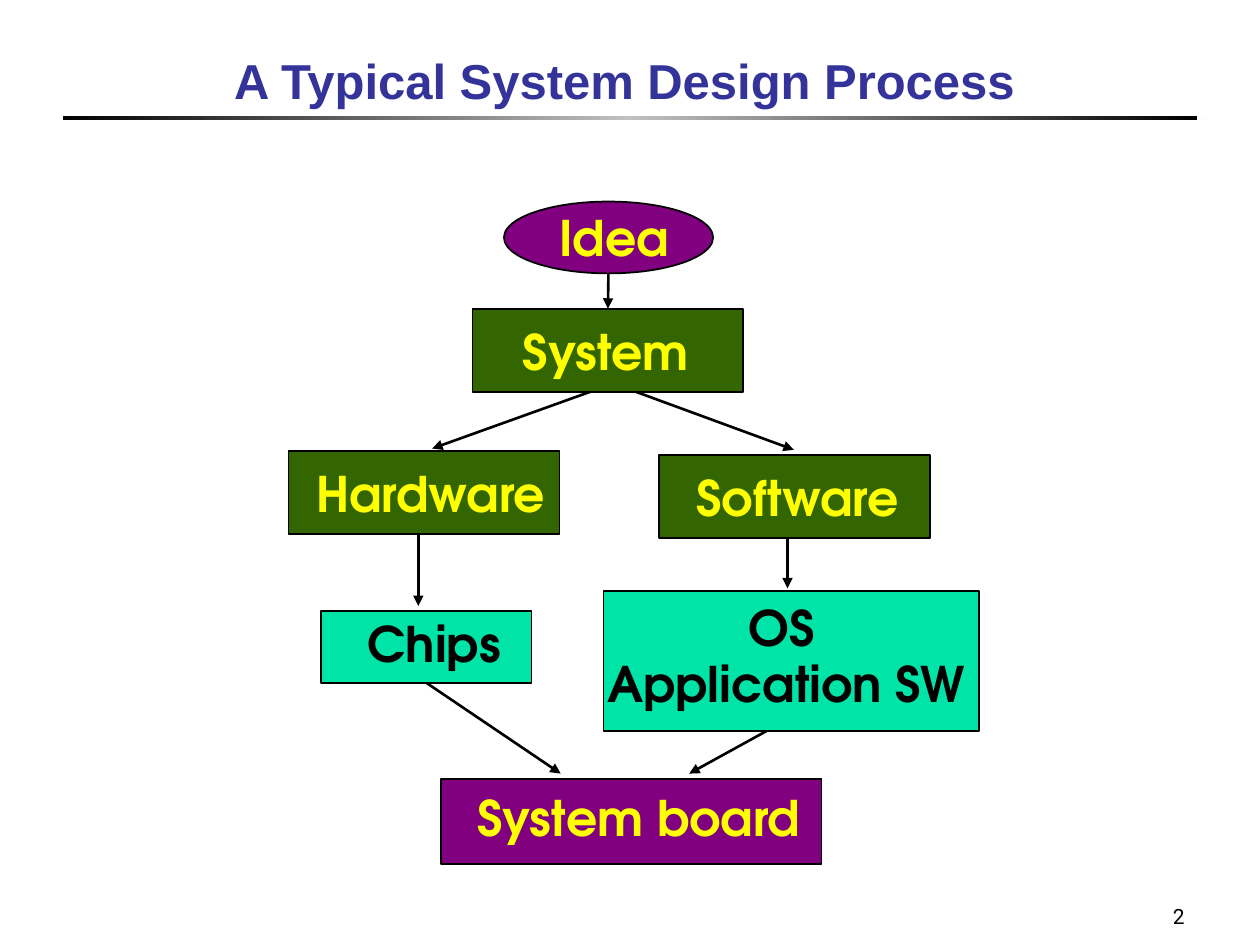
from copy import deepcopy

from lxml.etree import SubElement
from pptx import Presentation
from pptx.dml.color import RGBColor
from pptx.enum.shapes import MSO_CONNECTOR, MSO_SHAPE
from pptx.enum.text import MSO_ANCHOR, PP_ALIGN
from pptx.oxml.ns import qn
from pptx.util import Inches, Pt

BLACK = RGBColor(0x00, 0x00, 0x00)
CHARCOAL = RGBColor(0x1C, 0x1C, 0x1C)
SILVER = RGBColor(0xC0, 0xC0, 0xC0)
WHITE = RGBColor(0xFF, 0xFF, 0xFF)
NAVY = RGBColor(0x33, 0x33, 0x99)
PURPLE = RGBColor(0x80, 0x00, 0x80)
GREEN = RGBColor(0x33, 0x66, 0x00)
MINT = RGBColor(0x00, 0xE4, 0xA8)
YELLOW = RGBColor(0xFF, 0xFF, 0x00)


def add_shape(kind, *box):
    shape = s.shapes.add_shape(kind, *map(Inches, box))
    shape.shadow.inherit = False
    return shape


def format_text(p, text, font, size, color, bold):
    p.text = text
    f = p.runs[0].font
    f.name, f.size, f.bold = font, Pt(size), bold
    f.color.rgb = color


prs = Presentation()
prs.slide_width, prs.slide_height = Inches(10), Inches(7.5)
s = prs.slides.add_slide(prs.slide_layouts[5])

# Title and the gradient rule under it
title = s.shapes.title
title.left, title.top = Inches(0.58), Inches(0.17)
title.width, title.height = Inches(8.75), Inches(0.75)
title.text_frame.vertical_anchor = MSO_ANCHOR.BOTTOM
p = title.text_frame.paragraphs[0]
format_text(p, "A Typical System Design Process", "Arial", 28, NAVY, True)
p.alignment = PP_ALIGN.CENTER

for left, colors in [(0.67, [CHARCOAL, WHITE]), (0.5, [BLACK, SILVER, BLACK])]:
    bar = add_shape(MSO_SHAPE.RECTANGLE, left, 0.92, 9, 0.03)
    bar.line.fill.background()
    bar.fill.gradient()
    bar.fill.gradient_angle = 0
    stops = bar.element.spPr.find(".//" + qn("a:gsLst"))
    if len(colors) == 3:
        stops.insert(1, deepcopy(stops[0]))
    for i, (stop, color) in enumerate(zip(bar.fill.gradient_stops, colors)):
        stop.color.rgb = color
        stop.position = i / (len(colors) - 1)

# Arrows lie behind the boxes
arrows = {}
for start, end, x1, y1, x2, y2 in [
    ("OS", "System board", 6.25, 5.71, 5.47, 6.14),
    ("Chips", "System board", 3.37, 5.39, 4.45, 6.14),
    ("Software", "OS", 6.25, 4.18, 6.25, 4.67),
    ("Hardware", "Chips", 3.32, 4.17, 3.32, 4.81),
    ("System", "Software", 4.83, 3.03, 6.3, 3.57),
    ("System", "Hardware", 4.85, 3.05, 3.43, 3.56),
    ("Idea", "System", 4.83, 2.1, 4.83, 2.44),
]:
    arrow = s.shapes.add_connector(
        MSO_CONNECTOR.STRAIGHT, *map(Inches, (x1, y1, x2, y2)))
    arrow.line.color.rgb = BLACK
    arrow.line.width = Pt(1.5)
    SubElement(arrow.element.spPr.find(qn("a:ln")), qn("a:tailEnd"), type="triangle")
    SubElement(arrow.element.spPr, qn("a:effectLst"))
    arrows[start, end] = arrow

# Boxes, each with its labels as (text, left, top, width)
RECT, OVAL = MSO_SHAPE.RECTANGLE, MSO_SHAPE.OVAL
boxes = {}
for kind, box, fill, color, labels in [
    (OVAL, (4.0, 1.6, 1.66, 0.57), PURPLE, YELLOW, [("Idea", 4.34, 1.6, 1.1)]),
    (RECT, (3.75, 2.45, 2.15, 0.66), GREEN, YELLOW, [("System", 4.05, 2.5, 1.57)]),
    (RECT, (2.29, 3.58, 2.15, 0.66), GREEN, YELLOW, [("Hardware", 2.41, 3.63, 2.09)]),
    (RECT, (5.23, 3.61, 2.15, 0.66), GREEN, YELLOW, [("Software", 5.43, 3.66, 1.86)]),
    (RECT, (3.5, 6.18, 3.02, 0.68), PURPLE, YELLOW, [("System board", 3.69, 6.2, 2.85)]),
    (RECT, (2.55, 4.85, 1.67, 0.57), MINT, BLACK, [("Chips", 2.82, 4.82, 1.29)]),
    (RECT, (4.79, 4.69, 2.98, 1.11), MINT, BLACK,
     [("OS", 5.84, 4.69, 0.77), ("Application SW", 4.72, 5.14, 3.12)]),
]:
    shape = add_shape(kind, *box)
    shape.fill.solid()
    shape.fill.fore_color.rgb = fill
    shape.line.color.rgb = BLACK
    shape.line.width = Pt(1)
    boxes[labels[0][0]] = shape
    for text, left, top, width in labels:
        tb = s.shapes.add_textbox(*map(Inches, (left, top, width, 0.57)))
        tb.text_frame.word_wrap = False
        format_text(tb.text_frame.paragraphs[0], text,
                    "TeX Gyre Adventor", 28, color, True)

# Join the arrows that meet the middle of a rectangle's side
arrows["Idea", "System"].end_connect(boxes["System"], 0)
arrows["Chips", "System board"].begin_connect(boxes["Chips"], 2)

# Page number
tb = s.shapes.add_textbox(Inches(7.42), Inches(6.92), Inches(2.08), Inches(0.5))
tf = tb.text_frame
tf.word_wrap = True
tf.vertical_anchor = MSO_ANCHOR.BOTTOM
format_text(tf.paragraphs[0], "2", "Roboto", 12, BLACK, False)
tf.paragraphs[0].alignment = PP_ALIGN.RIGHT

prs.save("out.pptx")
